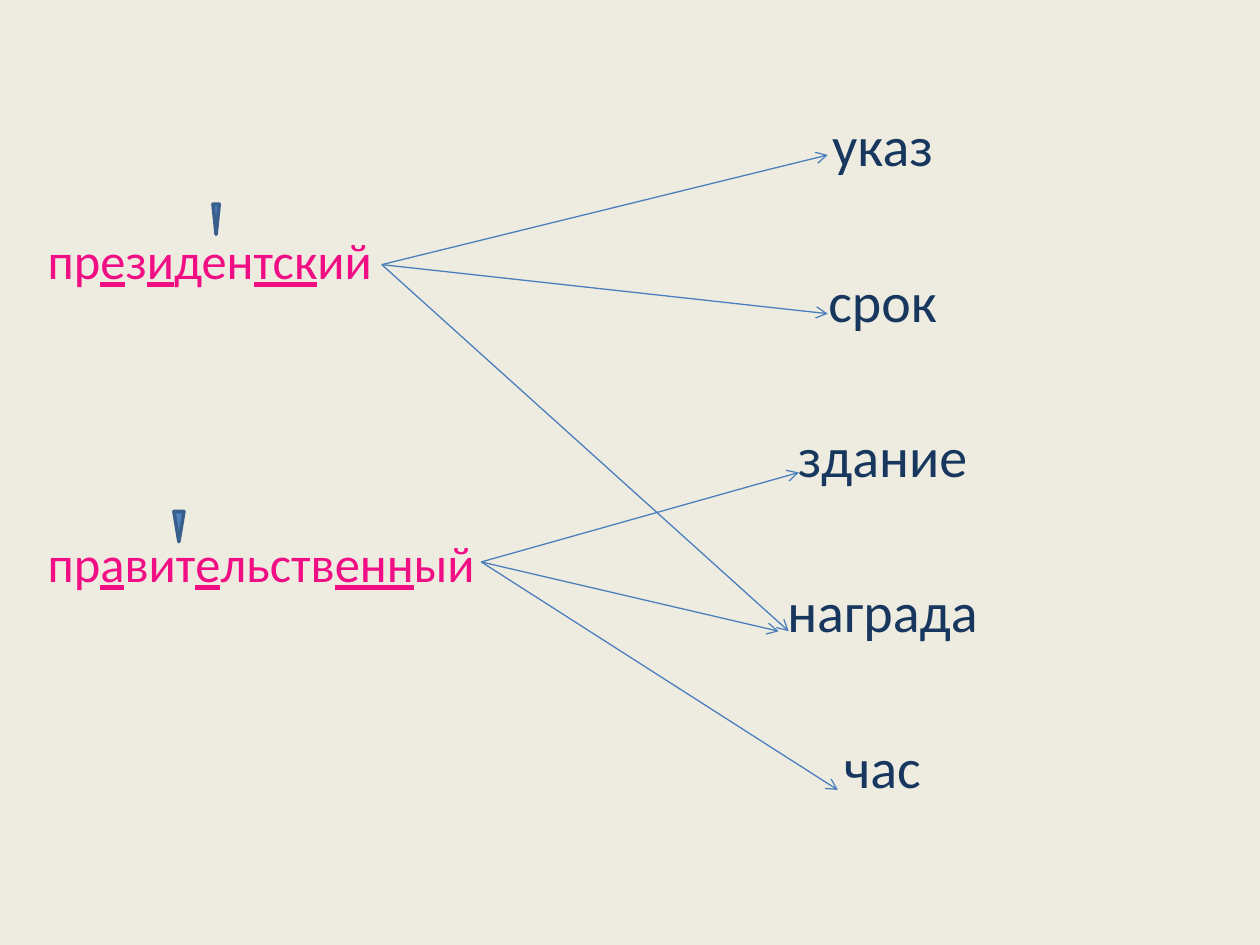
from lxml.etree import SubElement
from pptx import Presentation
from pptx.dml.color import RGBColor
from pptx.enum.shapes import MSO_CONNECTOR, MSO_SHAPE
from pptx.enum.text import PP_ALIGN
from pptx.oxml.ns import qn
from pptx.util import Inches, Pt

CREAM = RGBColor(0xEE, 0xEC, 0xE1)
PINK = RGBColor(0xF1, 0x0D, 0x84)
NAVY = RGBColor(0x17, 0x37, 0x5E)
BLUE = RGBColor(0x4F, 0x81, 0xBD)
DARK_BLUE = RGBColor(0x3A, 0x5F, 0x8C)
ARROW_BLUE = RGBColor(0x4B, 0x7E, 0xBC)

NOUNS = ["указ", "срок", "здание", "награда", "час"]

# Adjective (underlined letters between "_"), box, stress mark, arrow tips
ADJECTIVES = [
    ("пр_е_з_и_ден_тск_ий", (0.28, 1.77, 2.75, 0.66), (1.69, 1.62, 0.05, 0.24),
     [(6.57, 1.23), (6.57, 2.49), (6.26, 5.01)]),
    ("пр_а_вит_е_льств_енн_ый", (0.28, 4.17, 3.54, 0.58), (1.38, 4.06, 0.08, 0.24),
     [(6.34, 3.75), (6.18, 5.01), (6.65, 6.27)]),
]


class WordMatchSlide:
    font_name = "Calibri"

    def __init__(self, presentation):
        self.slide = presentation.slides.add_slide(presentation.slide_layouts[6])
        self.shapes = self.slide.shapes
        background = self.slide.background.fill
        background.solid()
        background.fore_color.rgb = CREAM

    def style(self, run, size, color):
        run.font.name = self.font_name
        run.font.size = Pt(size)
        run.font.color.rgb = color

    def adjective(self, marked_word, box):
        """Add a word whose parts between underscores are underlined."""
        word = self.shapes.add_textbox(*map(Inches, box))
        frame = word.text_frame
        frame.word_wrap = False
        frame.margin_right = 0
        for index, letters in enumerate(marked_word.split("_")):
            run = frame.paragraphs[0].add_run()
            run.text = letters
            self.style(run, 28.8, PINK)
            run.font.underline = index % 2 == 1
        return word

    def nouns(self, words, box):
        frame = self.shapes.add_textbox(*map(Inches, box)).text_frame
        frame.word_wrap = True
        frame.text = "\n".join(words)
        for paragraph in frame.paragraphs:
            paragraph.alignment = PP_ALIGN.CENTER
            paragraph.space_after = Pt(50.4)
            self.style(paragraph.runs[0], 32, NAVY)

    def stress_mark(self, box):
        mark = self.shapes.add_shape(MSO_SHAPE.FLOWCHART_MERGE, *map(Inches, box))
        mark.shadow.inherit = False
        mark.fill.solid()
        mark.fill.fore_color.rgb = BLUE
        mark.line.color.rgb = DARK_BLUE
        mark.line.width = Pt(2)

    def arrow(self, word, tip):
        """Draw an arrow from the right side of a word to a point."""
        x, y = map(Inches, tip)
        arrow = self.shapes.add_connector(MSO_CONNECTOR.STRAIGHT, 0, 0, x, y)
        arrow.begin_connect(word, 3)
        arrow.line.color.rgb = ARROW_BLUE
        arrow.line.width = Pt(0.75)
        SubElement(arrow.line._get_or_add_ln(), qn("a:tailEnd"), type="arrow")
        SubElement(arrow._element.spPr, qn("a:effectLst"))


def main():
    presentation = Presentation()
    presentation.slide_width = Inches(10)
    presentation.slide_height = Inches(7.5)
    page = WordMatchSlide(presentation)
    page.nouns(NOUNS, (4.21, 0.83, 5.59, 6.07))
    for marked_word, box, stress_box, tips in ADJECTIVES:
        adjective = page.adjective(marked_word, box)
        page.stress_mark(stress_box)
        for tip in tips:
            page.arrow(adjective, tip)
    presentation.save("out.pptx")


if __name__ == "__main__":
    main()
